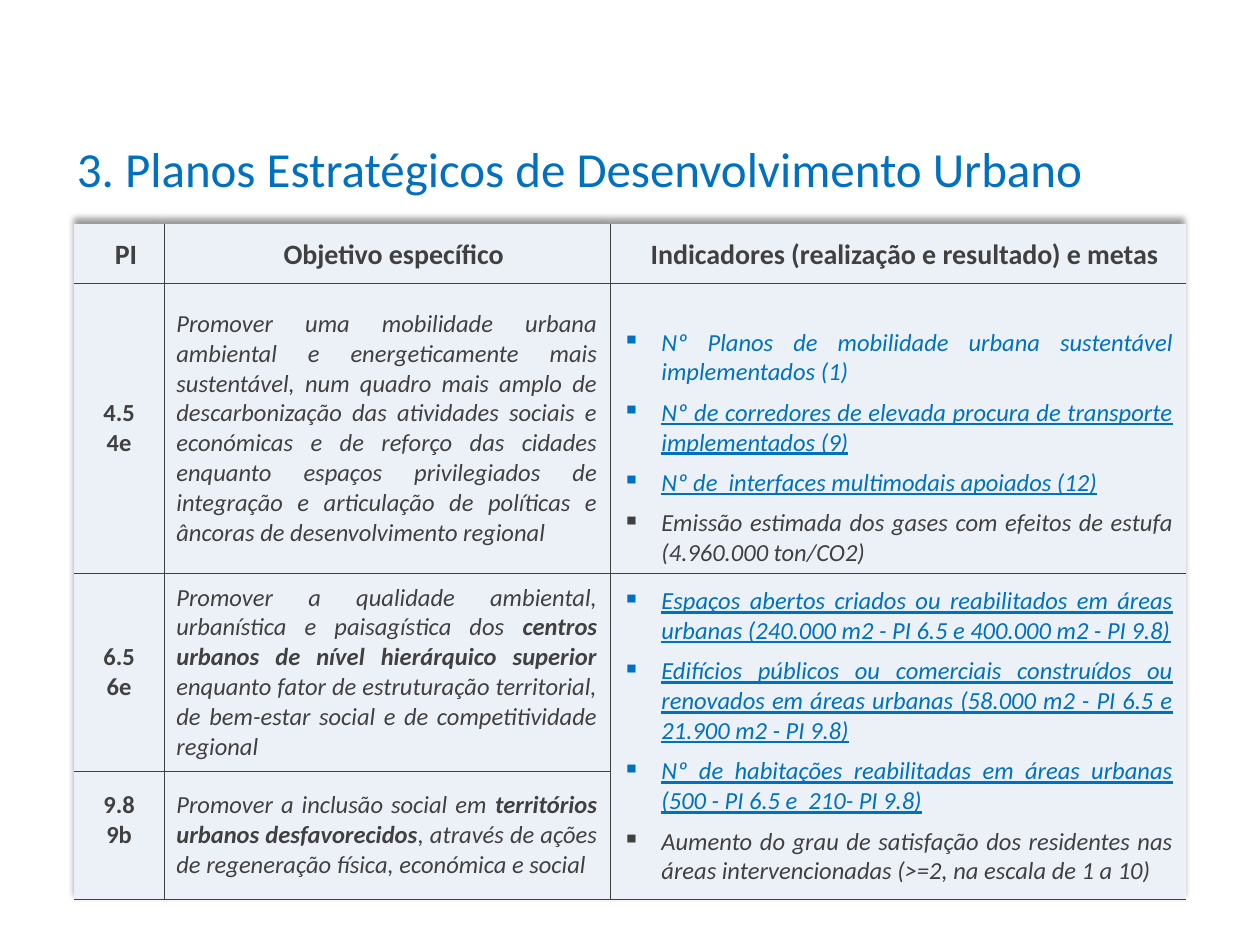
from lxml import etree
from pptx import Presentation
from pptx.dml.color import RGBColor
from pptx.enum.text import MSO_ANCHOR, MSO_AUTO_SIZE, PP_ALIGN
from pptx.oxml import parse_xml
from pptx.oxml.ns import nsdecls, qn
from pptx.util import Inches, Pt

TOP, MIDDLE = MSO_ANCHOR.TOP, MSO_ANCHOR.MIDDLE
LEFT, CENTER, JUSTIFY = PP_ALIGN.LEFT, PP_ALIGN.CENTER, PP_ALIGN.JUSTIFY
TITLE_ONLY = 5
FONT = "Calibri"
COLORS = {"blue": "0070C0", "text": "404040", "cell": "ECF1F8"}
NO_STYLE = "{2D5ABB26-0587-4C30-8999-92F81FD0307C}"

COLUMN_WIDTHS = [0.71, 3.54, 4.57]
ROW_HEIGHTS = [0.47, 2.30, 1.57, 1.02]
HEADERS = ["PI", "Objetivo específico", "Indicadores (realização e resultado) e metas"]
PRIORITIES = [["4.5", "4e"], ["6.5", "6e"], ["9.8", "9b"]]

# Each objective is a list of (text, bold)
OBJECTIVES = [
    [("Promover uma mobilidade urbana ambiental e energeticamente mais sustentável, "
      "num quadro mais amplo de descarbonização das atividades sociais e económicas "
      "e de reforço das cidades enquanto espaços privilegiados de integração e "
      "articulação de políticas e âncoras de desenvolvimento regional", False)],
    [("Promover a qualidade ambiental, urbanística e paisagística dos ", False),
     ("centros urbanos de nível hierárquico superior ", True),
     ("enquanto fator de estruturação territorial, de bem-estar social e de "
      "competitividade regional", False)],
    [("Promover a inclusão social em ", False),
     ("territórios urbanos desfavorecidos", True),
     (", através de ações de regeneração física, económica e social", False)],
]

# Each indicator is (text, colour, underlined)
MOBILITY_INDICATORS = [
    ("Nº Planos de mobilidade urbana sustentável implementados (1)", "blue", False),
    ("Nº de corredores de elevada procura de transporte implementados (9)", "blue", True),
    ("Nº de  interfaces multimodais apoiados (12)", "blue", True),
    ("Emissão estimada dos gases com efeitos de estufa (4.960.000 ton/CO2)", "text", False),
]
URBAN_INDICATORS = [
    ("Espaços abertos criados ou reabilitados em áreas urbanas "
     "(240.000 m2 - PI 6.5 e 400.000 m2 - PI 9.8)", "blue", True),
    ("Edifícios públicos ou comerciais construídos ou renovados em áreas urbanas "
     "(58.000 m2 - PI 6.5 e 21.900 m2 - PI 9.8)", "blue", True),
    ("Nº de habitações reabilitadas em áreas urbanas "
     "(500 - PI 6.5 e  210- PI 9.8)", "blue", True),
    ("Aumento do grau de satisfação dos residentes nas áreas intervencionadas "
     "(>=2, na escala de 1 a 10)", "text", False),
]


def format_paragraph(paragraph, size, color="text", align=LEFT, bold=None,
                     italic=None, underline=None):
    paragraph.alignment = align
    font = paragraph.font
    font.name, font.size = FONT, Pt(size)
    font.bold, font.italic, font.underline = bold, italic, underline
    font.color.rgb = RGBColor.from_string(COLORS[color])


def next_paragraph(text_frame, index):
    return text_frame.paragraphs[0] if index == 0 else text_frame.add_paragraph()


def set_margins(cell, left, top, right, bottom):
    cell.margin_left, cell.margin_top = Inches(left), Inches(top)
    cell.margin_right, cell.margin_bottom = Inches(right), Inches(bottom)


def add_borders(cell, sides):
    properties = cell._tc.get_or_add_tcPr()
    for position, side in enumerate(sides):
        properties.insert(position, parse_xml(
            f'<a:ln{side} {nsdecls("a")} w="{Pt(0.25)}"><a:solidFill>'
            f'<a:srgbClr val="{COLORS["text"]}"/></a:solidFill></a:ln{side}>'))


def add_bullet(paragraph):
    properties = paragraph._p.get_or_add_pPr()
    properties.set("marL", str(Inches(0.31)))
    properties.set("indent", str(-Inches(0.31)))
    etree.SubElement(properties, qn("a:buChar")).set("char", "▪")


def add_title(slide, left, top, width, height):
    title = slide.shapes.title
    title.left, title.top, title.width, title.height = left, top, width, height
    text_frame = title.text_frame
    text_frame.text = "3. Planos Estratégicos de Desenvolvimento Urbano"
    text_frame.auto_size = MSO_AUTO_SIZE.NONE
    text_frame.vertical_anchor = TOP
    format_paragraph(text_frame.paragraphs[0], 28, "blue")


def style_table(table):
    table.first_row = table.horz_banding = False
    properties = table._tbl.tblPr
    properties.find(qn("a:tableStyleId")).text = NO_STYLE
    properties.insert(0, parse_xml(
        f'<a:effectLst {nsdecls("a")}><a:outerShdw blurRad="{Pt(4)}" '
        f'dist="{Pt(3)}" dir="16200000" rotWithShape="0"><a:srgbClr val="000000">'
        '<a:alpha val="40000"/></a:srgbClr></a:outerShdw></a:effectLst>'))
    for column, width in zip(table.columns, COLUMN_WIDTHS):
        column.width = Inches(width)
    for row, height in zip(table.rows, ROW_HEIGHTS):
        row.height = Inches(height)
    last_column = len(COLUMN_WIDTHS) - 1
    for row_index, row in enumerate(table.rows):
        for column_index, cell in enumerate(row.cells):
            cell.fill.solid()
            cell.fill.fore_color.rgb = RGBColor.from_string(COLORS["cell"])
            cell.vertical_anchor = MIDDLE
            sides = {"L": column_index > 0, "R": column_index < last_column,
                     "T": row_index > 0 and not cell.is_spanned, "B": True}
            add_borders(cell, [side for side, drawn in sides.items() if drawn])


def write_indicators(cell, indicators):
    for index, (text, color, underlined) in enumerate(indicators):
        paragraph = next_paragraph(cell.text_frame, index)
        paragraph.text = text
        add_bullet(paragraph)
        if index:
            paragraph.space_before = Pt(6)
        format_paragraph(paragraph, 14, color, JUSTIFY, italic=True,
                         underline=underlined)


def add_plan_table(slide, left, top, width, height):
    table = slide.shapes.add_table(len(ROW_HEIGHTS), len(COLUMN_WIDTHS),
                                   left, top, width, height).table
    table.cell(2, 2).merge(table.cell(3, 2))
    style_table(table)

    # Header row
    for column_index, header in enumerate(HEADERS):
        cell = table.cell(0, column_index)
        cell.text = header
        set_margins(cell, 0.12, 0.01, 0.01, 0)
        format_paragraph(cell.text_frame.paragraphs[0], 16, align=CENTER, bold=True)

    # Priorities and objectives
    for row_index, (codes, objective) in enumerate(zip(PRIORITIES, OBJECTIVES), 1):
        code_frame = table.cell(row_index, 0).text_frame
        for index, code in enumerate(codes):
            paragraph = next_paragraph(code_frame, index)
            paragraph.text = code
            format_paragraph(paragraph, 14, align=CENTER, bold=True)
        paragraph = table.cell(row_index, 1).text_frame.paragraphs[0]
        format_paragraph(paragraph, 14, align=JUSTIFY, italic=True)
        for text, bold in objective:
            run = paragraph.add_run()
            run.text = text
            run.font.bold = bold
    set_margins(table.cell(3, 0), 0.1, 0.05, 0.1, 0.29)

    # Indicators
    write_indicators(table.cell(1, 2), MOBILITY_INDICATORS)
    set_margins(table.cell(1, 2), 0.1, 0.35, 0.1, 0.04)
    write_indicators(table.cell(2, 2), URBAN_INDICATORS)


def main():
    presentation = Presentation()
    presentation.slide_width, presentation.slide_height = Inches(10), Inches(7.5)
    slide = presentation.slides.add_slide(presentation.slide_layouts[TITLE_ONLY])
    add_title(slide, Inches(0.51), Inches(1.05), Inches(9.06), Inches(0.57))
    add_plan_table(slide, Inches(0.59), Inches(1.78),
                   Inches(sum(COLUMN_WIDTHS)), Inches(sum(ROW_HEIGHTS)))
    presentation.save("out.pptx")


if __name__ == "__main__":
    main()
